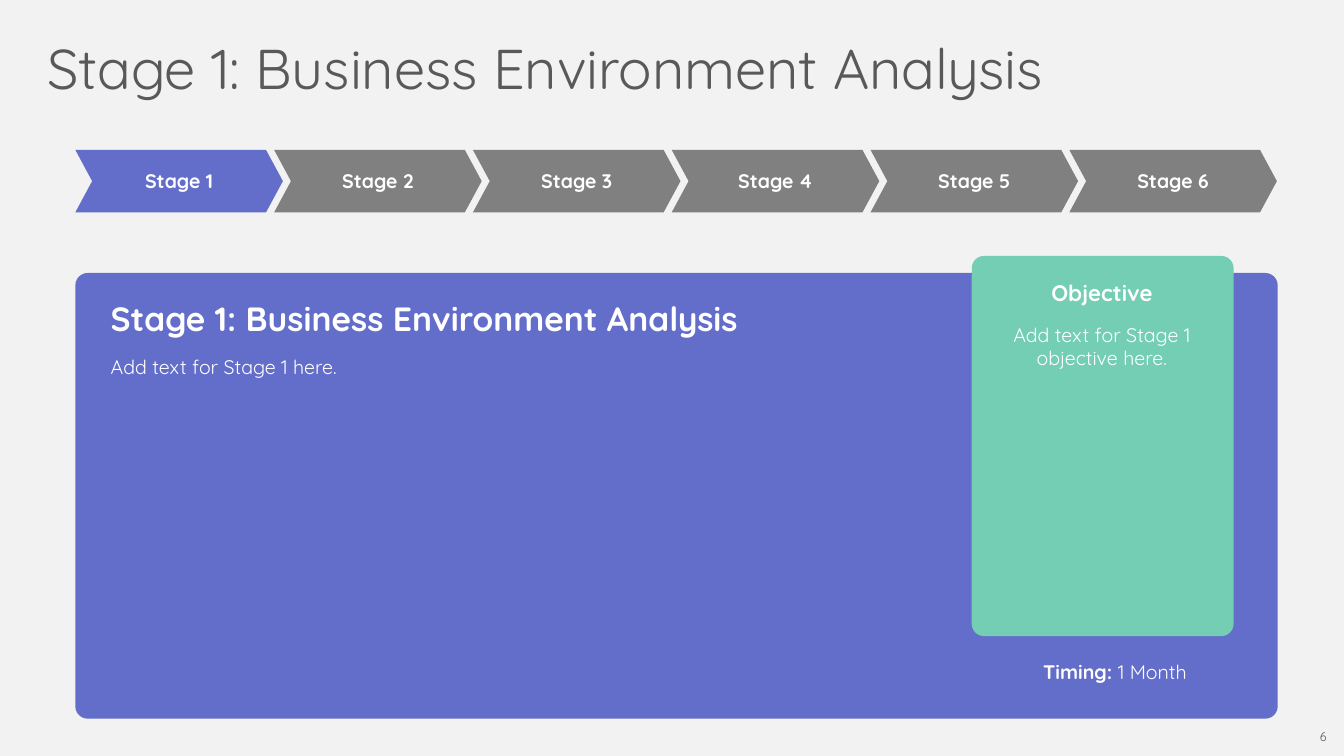
from dataclasses import dataclass
from pptx import Presentation
from pptx.dml.color import RGBColor
from pptx.enum.shapes import MSO_SHAPE
from pptx.enum.text import MSO_ANCHOR, PP_ALIGN
from pptx.util import Cm, Pt

HEAD = "Stage 1: Business Environment Analysis"
STAGES = [f"Stage {n}" for n in range(1, 7)]
ACTIVE = 0
DETAIL = [HEAD, "Add text for Stage 1 here."]
GOAL = ["Objective", "Add text for Stage 1 objective here."]
TIMING = ("Timing: ", "1 Month")
PAGE = "6"


@dataclass(frozen=True)
class Theme:
    font: str = "Quicksand"
    back: str = "F2F2F2"
    ink: str = "595959"
    white: str = "FFFFFF"
    blue: str = "636DCA"
    gray: str = "808080"
    green: str = "74CEB3"
    title: int = 40
    lead: int = 24
    head: int = 16
    body: int = 14
    small: int = 9


theme = Theme()
ROW = (1.9, 3.78, 5.23, 1.57)
STEP = 5.01
PANEL = (1.9, 6.88, 30.3, 11.23)
CARD = (24.49, 6.45, 6.6, 9.58)
RADIUS = 0.31


def style(run, size, color=theme.white, bold=False):
    run.font.name = theme.font
    run.font.size = Pt(size)
    run.font.bold = bold
    run.font.color.rgb = RGBColor.from_string(color)


def add_block(slide, kind, box, color, adjust):
    shape = slide.shapes.add_shape(kind, *map(Cm, box))
    shape.adjustments[0] = adjust
    shape.shadow.inherit = False
    shape.fill.solid()
    shape.fill.fore_color.rgb = RGBColor.from_string(color)
    shape.line.fill.background()
    return shape


def add_card(slide, box, color):
    add_block(slide, MSO_SHAPE.ROUNDED_RECTANGLE, box, color, RADIUS / min(box[2:]))


def add_text(slide, box, lines, sizes, color=theme.white, align=PP_ALIGN.LEFT):
    frame = slide.shapes.add_textbox(*map(Cm, box)).text_frame
    frame.word_wrap = True
    frame.text = "\n".join(lines)
    for i, (para, size) in enumerate(zip(frame.paragraphs, sizes)):
        para.alignment = align
        para.space_before = Pt(12 if i else 0)
        style(para.runs[0], size, color, len(lines) > 1 and i == 0)
    return frame


def add_stages(slide):
    left, top, width, height = ROW
    for i, label in enumerate(STAGES):
        color = theme.blue if i == ACTIVE else theme.gray
        box = (left + i * STEP, top, width, height)
        frame = add_block(slide, MSO_SHAPE.CHEVRON, box, color, 0.27).text_frame
        frame.text = label
        frame.vertical_anchor = MSO_ANCHOR.MIDDLE
        frame.paragraphs[0].alignment = PP_ALIGN.CENTER
        style(frame.paragraphs[0].runs[0], theme.body, bold=True)


def main():
    deck = Presentation()
    deck.slide_width, deck.slide_height = Cm(33.87), Cm(19.05)
    slide = deck.slides.add_slide(deck.slide_layouts[6])
    slide.background.fill.solid()
    slide.background.fill.fore_color.rgb = RGBColor.from_string(theme.back)

    add_text(slide, (0.94, 0.71, 29.06, 1.96), [HEAD], [theme.title], theme.ink)
    add_text(slide, (32.74, 18.24, 0.94, 0.64), [PAGE], [theme.small],
             theme.ink, PP_ALIGN.RIGHT)
    add_stages(slide)
    add_card(slide, PANEL, theme.blue)
    add_card(slide, CARD, theme.green)
    add_text(slide, (25.04, 6.91, 5.46, 2.57), GOAL, [theme.head, theme.body],
             align=PP_ALIGN.CENTER)
    label, value = TIMING
    frame = add_text(slide, (26.04, 16.51, 4.67, 0.86), [label], [theme.body])
    line = frame.paragraphs[0]
    line.runs[0].font.bold = True
    run = line.add_run()
    run.text = value
    style(run, theme.body)
    add_text(slide, (2.54, 7.37, 20.14, 2.31), DETAIL, [theme.lead, theme.body])
    deck.save("out.pptx")


if __name__ == "__main__":
    main()
